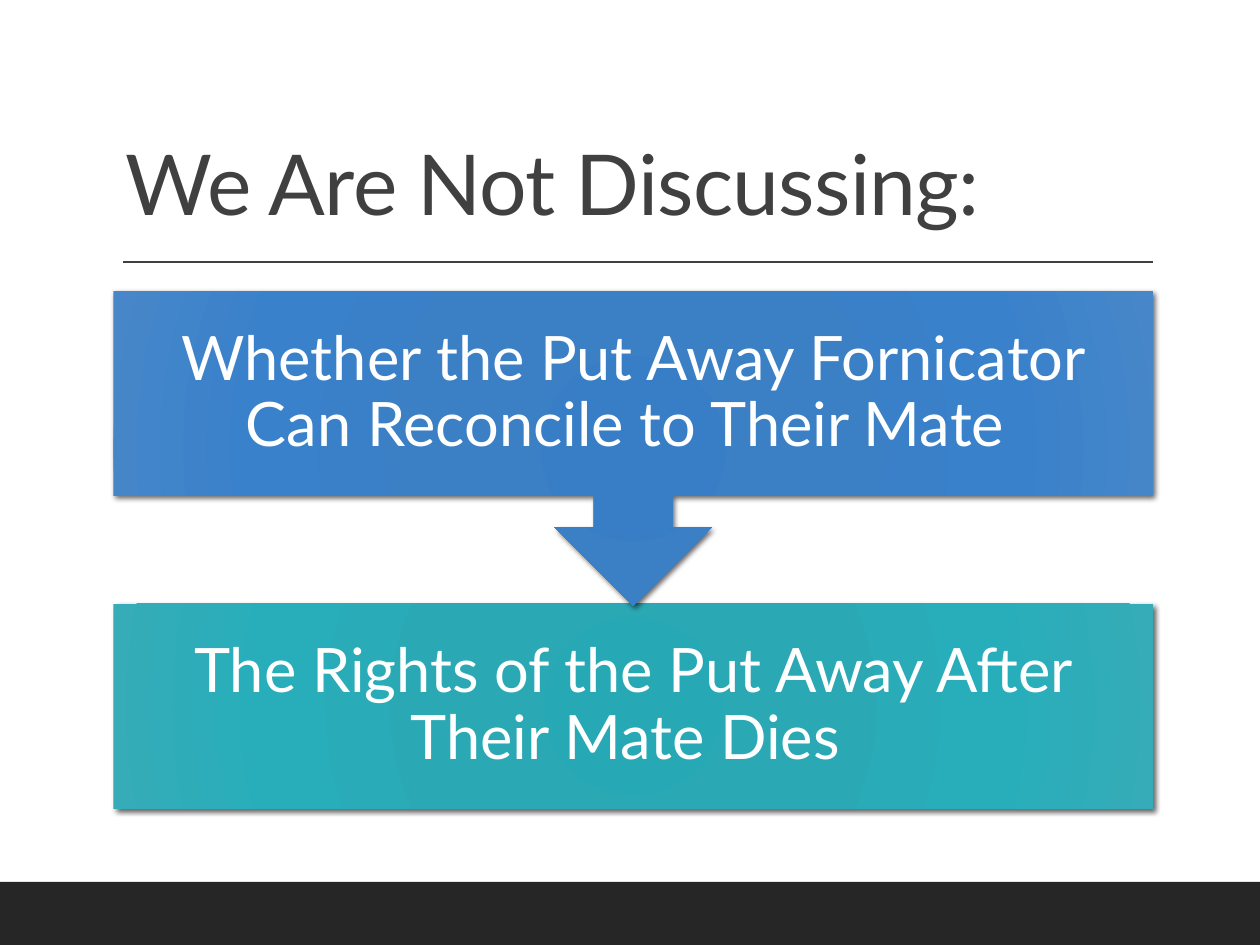
from dataclasses import dataclass

from lxml import etree
from pptx import Presentation
from pptx.dml.color import RGBColor
from pptx.enum.shapes import MSO_CONNECTOR as Connector, MSO_SHAPE as Shape
from pptx.enum.text import MSO_ANCHOR as Anchor, PP_ALIGN as Align
from pptx.oxml import parse_xml
from pptx.oxml.ns import nsdecls, qn
from pptx.util import Inches, Pt


@dataclass(frozen=True)
class Theme:
    font: str = "Lato"
    title_size: float = 48
    box_size: float = 35
    ink: str = "404040"
    footer: str = "262626"
    light: str = "FFFFFF"
    blue: tuple = ("377EC6", "3B7FC5", "3981CB", "4787C9")
    teal: tuple = ("26A9B5", "2AA9B4", "27AEBA", "35ACB7")
    stops: tuple = (0, 34, 70, 100)


def lengths(values):
    return [Inches(value) for value in values]


def apply(target, values):
    for name, value in values.items():
        setattr(target, name, value)


class SlideBuilder:
    def __init__(self, page, theme):
        self.page = page
        self.theme = theme

    def block(self, kind, place, color=None):
        shape = self.page.shapes.add_shape(kind, *lengths(place))
        shape.shadow.inherit = False
        shape.line.fill.background()
        if color:
            shape.fill.solid()
            shape.fill.fore_color.rgb = RGBColor.from_string(color)
        return shape

    def glossy_block(self, kind, place, colors):
        """Add a shape with a radial gradient and a soft shadow."""
        shape = self.block(kind, place)
        stops = "".join(
            f'<a:gs pos="{stop * 1000}"><a:srgbClr val="{color}"/></a:gs>'
            for stop, color in zip(self.theme.stops, colors))
        gradient = parse_xml(
            f'<a:gradFill {nsdecls("a")} rotWithShape="1"><a:gsLst>{stops}</a:gsLst>'
            '<a:path path="circle"><a:fillToRect l="100000" t="100000" '
            'r="100000" b="100000"/></a:path></a:gradFill>')
        shadow = parse_xml(
            f'<a:outerShdw {nsdecls("a")} blurRad="{Pt(3)}" dist="{Pt(2)}" '
            'dir="2700000" rotWithShape="0"><a:srgbClr val="000000">'
            '<a:alpha val="60000"/></a:srgbClr></a:outerShdw>')
        properties = shape.element.spPr
        properties.find(qn("a:prstGeom")).addnext(gradient)
        properties.find(qn("a:effectLst")).append(shadow)
        return shape

    def rule(self, left, right, y):
        line = self.page.shapes.add_connector(
            Connector.STRAIGHT, *lengths((left, y, right, y)))
        line.line.color.rgb = RGBColor.from_string(self.theme.ink)
        line.line.width = Pt(1)
        etree.SubElement(line.element.spPr, qn("a:effectLst"))

    def text(self, words, place, size, color, anchor, align, inset=None,
             after=0, tracking=0):
        frame = self.page.shapes.add_textbox(*lengths(place)).text_frame
        apply(frame, {"word_wrap": True, "vertical_anchor": anchor})
        if inset is not None:
            sides = ("left", "top", "right", "bottom")
            apply(frame, {f"margin_{side}": Inches(inset) for side in sides})
        para = frame.paragraphs[0]
        apply(para, {"alignment": align, "line_spacing": 0.9,
                     "space_after": Pt(after)})
        span = para.add_run()
        span.text = words
        apply(span.font, {"name": self.theme.font, "size": Pt(size)})
        span.font.color.rgb = RGBColor.from_string(color)
        if tracking:
            span.font._element.set("spc", str(round(tracking * 100)))

    def box_text(self, words, place):
        self.text(words, place, self.theme.box_size, self.theme.light,
                  Anchor.MIDDLE, Align.CENTER, inset=0.27, after=12)


def main():
    theme = Theme()
    deck = Presentation()
    deck.slide_width, deck.slide_height = lengths((10, 7.5))
    builder = SlideBuilder(deck.slides.add_slide(deck.slide_layouts[6]), theme)

    left, width, box_height = 0.9, 8.25, 1.63
    first_top, second_top, callout_height = 2.31, 4.79, 2.5
    first_box = (left, first_top, width, box_height)
    second_box = (left, second_top, width, box_height)

    builder.block(Shape.RECTANGLE, (0, 7, 10, 0.5), theme.footer)
    builder.rule(0.98, left + width, 2.08)
    builder.text("We Are Not Discussing:", (left, 0.31, width, 1.59),
                 theme.title_size, theme.ink, Anchor.BOTTOM, Align.LEFT,
                 tracking=-0.4)

    builder.glossy_block(Shape.RECTANGLE, second_box, theme.teal)
    builder.box_text("The Rights of the Put Away After Their Mate Dies ", second_box)

    callout = builder.glossy_block(
        Shape.UP_ARROW_CALLOUT, (left, first_top, width, callout_height), theme.blue)
    callout.rotation = 180
    callout.adjustments[3] = 0.65
    builder.box_text("Whether the Put Away Fornicator Can Reconcile to Their Mate ",
                     first_box)

    deck.save("out.pptx")


if __name__ == "__main__":
    main()
